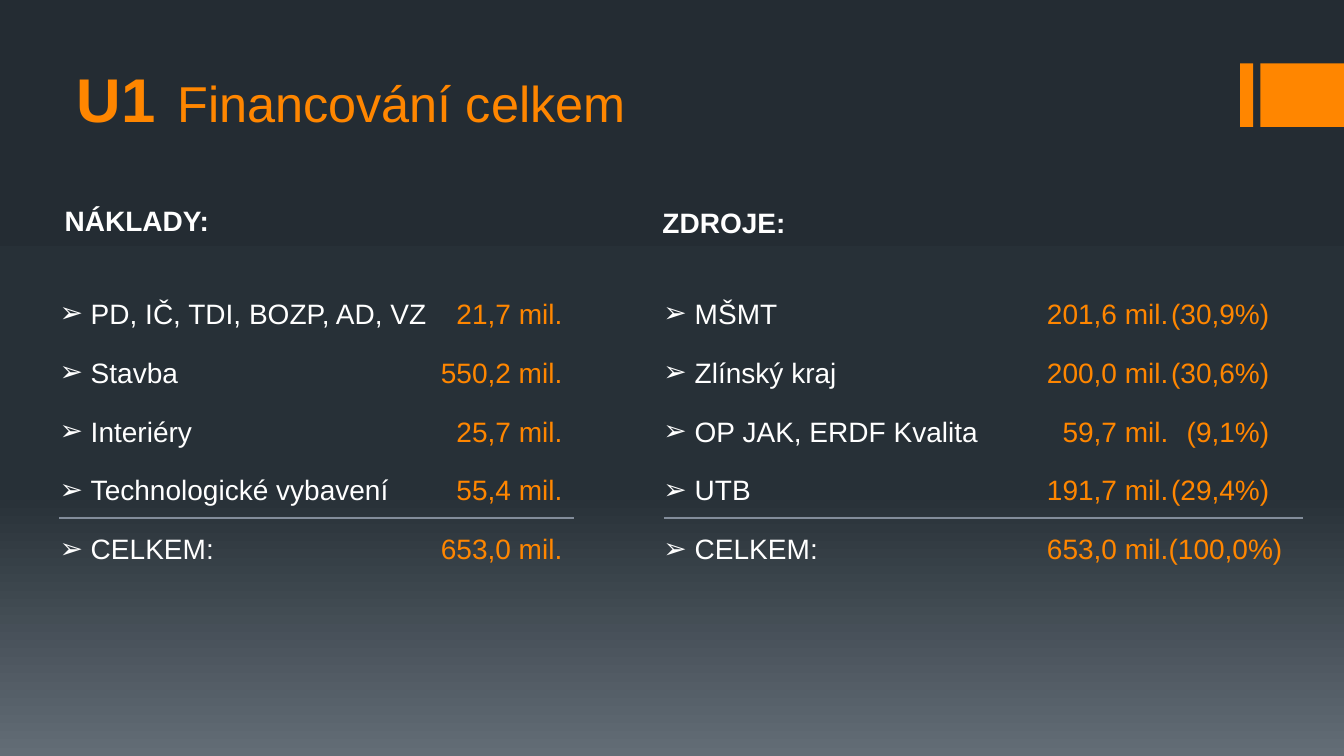
from dataclasses import dataclass

from lxml import etree
from pptx import Presentation
from pptx import util as u
from pptx.dml.color import RGBColor
from pptx.enum import shapes, text
from pptx.oxml import ns

ORANGE, WHITE, RULE = "FF8600", "FFFFFF", "838D9B"
BACKGROUND = [(0, "242C33"), (65, "273037"), (100, "636D76")]
AMOUNT_TAB, SHARE_TAB, TOTAL_SHARE_TAB = 5.19, 6.48, 6.56


@dataclass
class Row:
    label: str
    amount: str
    share: str = ""
    share_tab: float = SHARE_TAB


@dataclass
class Column:
    heading: str
    heading_at: tuple[float, float, float, float]
    list_at: tuple[float, float, float, float]
    rule: tuple[float, float]
    rows: list[Row]


COLUMNS = [
    Column("NÁKLADY:", (0.54, 1.97, 3.34, 0.44), (0.31, 2.89, 5.86, 3.9), (0.59, 5.69), [
        Row("PD, IČ, TDI, BOZP, AD, VZ", "21,7 mil."),
        Row("Stavba", "550,2 mil."),
        Row("Interiéry", "25,7 mil."),
        Row("Technologické vybavení", "55,4 mil."),
        Row("CELKEM:", "653,0 mil."),
    ]),
    Column("ZDROJE:", (6.47, 1.99, 3.34, 0.44), (6.3, 2.89, 6.88, 3.35), (6.59, 12.92), [
        Row("MŠMT", "201,6 mil.", "(30,9%)"),
        Row("Zlínský kraj", "200,0 mil.", "(30,6%)"),
        Row("OP JAK, ERDF Kvalita", "59,7 mil.", "(9,1%)"),
        Row("UTB", "191,7 mil.", "(29,4%)"),
        Row("CELKEM:", "653,0 mil.", "(100,0%)", TOTAL_SHARE_TAB),
    ]),
]


def rgb(color: str) -> RGBColor:
    return RGBColor.from_string(color)


def add_element(parent, tag: str, **attributes):
    return etree.SubElement(parent, ns.qn(tag), {k: str(v) for k, v in attributes.items()})


def add_run(p, words: str, size: float = 20, color: str = WHITE, bold: bool = False) -> None:
    r = p.add_run()
    r.text = words
    r.font.name, r.font.size, r.font.bold = "Arial", u.Pt(size), bold
    r.font.color.rgb = rgb(color)


def format_paragraph(p, after: float = 0, indent: float = 0, hanging: float = 0,
                     bullet: str = "", tabs: tuple = ()) -> None:
    """Set spacing, indents, bullet and tab stops; tabs hold (inches, alignment)."""
    pPr = p._p.get_or_add_pPr()
    pPr.set("marL", str(u.Inches(indent)))
    pPr.set("indent", str(u.Inches(-hanging)))
    if bullet:
        add_element(add_element(pPr, "a:buClr"), "a:srgbClr", val=WHITE)
        add_element(pPr, "a:buFont", typeface="Arial")
        add_element(pPr, "a:buChar", char=bullet)
    else:
        add_element(pPr, "a:buNone")
    if tabs:
        stops = add_element(pPr, "a:tabLst")
        for position, alignment in tabs:
            add_element(stops, "a:tab", pos=u.Inches(position), algn=alignment)
    p.alignment = text.PP_ALIGN.LEFT
    p.space_before, p.space_after = u.Pt(0), u.Pt(after)


def place(sp, at: tuple, anchor=text.MSO_ANCHOR.TOP):
    """Move a placeholder and return its text frame."""
    sp.left, sp.top, sp.width, sp.height = map(u.Inches, at)
    tf = sp.text_frame
    tf.word_wrap, tf.auto_size = True, text.MSO_AUTO_SIZE.NONE
    tf.vertical_anchor = anchor
    return tf


def paint_background(s) -> None:
    fill = s.background.fill
    fill.gradient()
    fill.gradient_angle = 270
    stops = s.background._cSld.find(".//" + ns.qn("a:gsLst"))
    for stop in list(stops):
        stops.remove(stop)
    for percent, color in BACKGROUND:
        add_element(add_element(stops, "a:gs", pos=percent * 1000), "a:srgbClr", val=color)


def add_bar(s, left: float, width: float) -> None:
    sp = s.shapes.add_shape(shapes.MSO_SHAPE.RECTANGLE, u.Inches(left), u.Inches(0.63),
                            u.Inches(width), u.Inches(0.63))
    sp.shadow.inherit = False
    sp.fill.solid()
    sp.fill.fore_color.rgb = rgb(ORANGE)
    sp.line.fill.background()


def add_rule(s, start: float, end: float, y: float = 5.14) -> None:
    line = s.shapes.add_connector(shapes.MSO_CONNECTOR.STRAIGHT, u.Inches(start), u.Inches(y),
                                  u.Inches(end), u.Inches(y))
    line.line.color.rgb = rgb(RULE)
    line.line.width = u.Pt(1)
    add_element(line._element.spPr, "a:effectLst")


def add_title(s) -> None:
    tf = place(s.shapes.title, (0.66, 0.52, 11.51, 0.87), text.MSO_ANCHOR.BOTTOM)
    p = tf.paragraphs[0]
    format_paragraph(p, tabs=((1.34, "l"),))
    add_run(p, "U1", size=44.1, color=ORANGE, bold=True)
    add_run(p, "\tFinancování celkem", size=36, color=ORANGE)


def fill_column(s, column: Column, heading, listing) -> None:
    p = place(heading, column.heading_at).paragraphs[0]
    format_paragraph(p)
    add_run(p, column.heading, bold=True)

    tf = place(listing, column.list_at)
    for i, row in enumerate(column.rows):
        p = tf.add_paragraph() if i else tf.paragraphs[0]
        tabs = ((AMOUNT_TAB, "r"),)
        figures = "\t" + row.amount
        if row.share:
            tabs += ((row.share_tab, "r"),)
            figures += "\t" + row.share
        format_paragraph(p, after=18, indent=0.49, hanging=0.31, bullet="➢", tabs=tabs)
        add_run(p, row.label)
        add_run(p, figures, color=ORANGE)
    add_rule(s, *column.rule)


def main() -> None:
    prs = Presentation()
    prs.slide_width, prs.slide_height = u.Inches(13.33), u.Inches(7.5)
    s = prs.slides.add_slide(prs.slide_layouts.get_by_name("Comparison"))
    paint_background(s)
    add_bar(s, 12.3, 0.13)
    add_bar(s, 12.5, 0.83)
    add_title(s)
    bodies = list(s.placeholders)[1:]
    for column, heading, listing in zip(COLUMNS, bodies[::2], bodies[1::2]):
        fill_column(s, column, heading, listing)
    prs.save("out.pptx")


if __name__ == "__main__":
    main()
